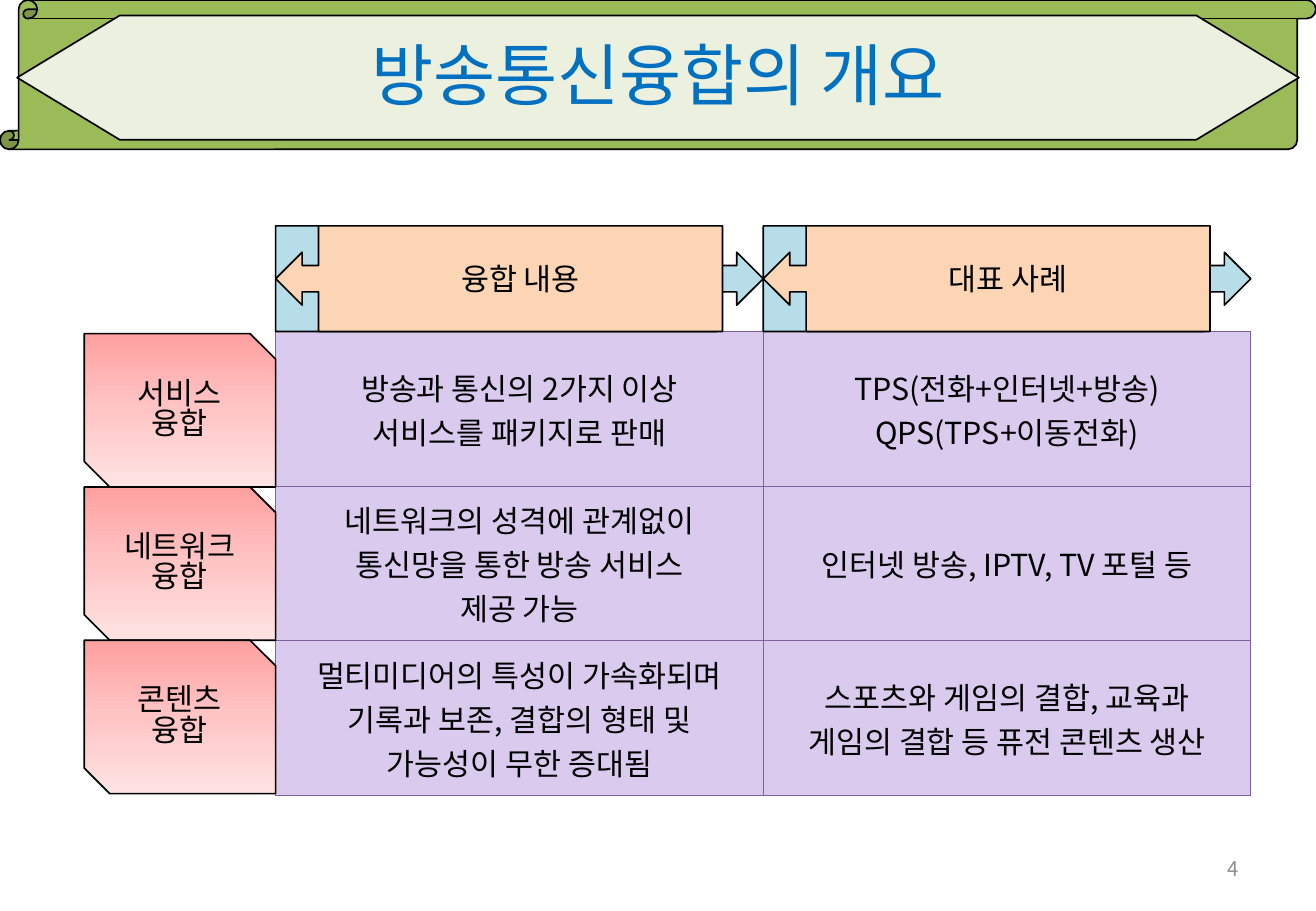
from copy import deepcopy
from dataclasses import dataclass

from lxml.etree import SubElement
from pptx import Presentation
from pptx.dml.color import RGBColor
from pptx.enum.shapes import MSO_SHAPE as Preset
from pptx.enum.text import MSO_ANCHOR as Anchor, PP_ALIGN as Align
from pptx.oxml.ns import qn
from pptx.shapes.autoshape import Shape
from pptx.slide import Slide
from pptx.table import _Cell as Cell
from pptx.text.text import TextFrame
from pptx.util import Inches, Pt

FONT = "Noto Sans CJK KR"
BLACK = RGBColor(0x00, 0x00, 0x00)
GREY = RGBColor(0x8C, 0x8C, 0x8C)
BLUE = RGBColor(0x00, 0x70, 0xC0)
GREEN = RGBColor(0x9B, 0xBB, 0x59)
PALE_GREEN = RGBColor(0xEB, 0xF1, 0xDE)
PALE_BLUE = RGBColor(0xB7, 0xDE, 0xE8)
PEACH = RGBColor(0xFC, 0xD5, 0xB5)
LILAC = RGBColor(0xD9, 0xCA, 0xEE)
PURPLE = RGBColor(0x7D, 0x60, 0xA0)
PINKS = [RGBColor(0xFF, 0xA0, 0xA0), RGBColor(0xFF, 0xC5, 0xC5), RGBColor(0xFF, 0xE3, 0xE3)]

SLIDE_WIDTH, SLIDE_HEIGHT = Inches(10.83), Inches(7.5)
TABLE_LEFT, TABLE_TOP = 20.95, 36.4
COLUMN_WIDTH, ROW_HEIGHT = 37.05, 16.97
HEADER_TOP, HEADER_HEIGHT, HEADER_FRONT = 24.8, 11.6, 33.95
LABEL_LEFT, LABEL_TOP, LABEL_WIDTH, LABEL_HEIGHT = 6.4, 36.63, 14.55, 16.83


@dataclass(frozen=True)
class Area:
    """Left, top, width and height in percent of the slide."""
    left: float
    top: float
    width: float
    height: float

    def lengths(self) -> tuple[int, int, int, int]:
        return (int(SLIDE_WIDTH * self.left / 100), int(SLIDE_HEIGHT * self.top / 100),
                int(SLIDE_WIDTH * self.width / 100), int(SLIDE_HEIGHT * self.height / 100))


@dataclass(frozen=True)
class Row:
    label: str
    content: str
    example: str


HEADERS = ["융합 내용", "대표 사례"]
ROWS = [
    Row("서비스\n융합", "방송과 통신의 2가지 이상\n서비스를 패키지로 판매",
        "TPS(전화+인터넷+방송)\nQPS(TPS+이동전화)"),
    Row("네트워크\n융합", "네트워크의 성격에 관계없이\n통신망을 통한 방송 서비스\n제공 가능",
        "인터넷 방송, IPTV, TV 포털 등"),
    Row("콘텐츠\n융합", "멀티미디어의 특성이 가속화되며 기록과 보존, 결합의 형태 및\n가능성이 무한 증대됨",
        "스포츠와 게임의 결합, 교육과\n게임의 결합 등 퓨전 콘텐츠 생산"),
]


def write(frame: TextFrame, text: str, size: float = 18, color: RGBColor = BLACK,
          align: Align = Align.CENTER, spacing: float = 1.0) -> None:
    frame.text = text
    frame.word_wrap = True
    for para in frame.paragraphs:
        para.alignment = align
        para.line_spacing = spacing
        for span in para.runs:
            span.font.size = Pt(size)
            span.font.color.rgb = color
            span.font.name = FONT
            SubElement(span.font._element, qn("a:ea")).set("typeface", FONT)


def add_box(page: Slide, preset: Preset, area: Area, fill: RGBColor,
            adjustments: tuple[float, ...] = ()) -> Shape:
    box = page.shapes.add_shape(preset, *area.lengths())
    box.shadow.inherit = False
    box.fill.solid()
    box.fill.fore_color.rgb = fill
    box.line.color.rgb = BLACK
    box.line.width = Pt(1)
    for index, value in enumerate(adjustments):
        box.adjustments[index] = value
    box.text_frame.vertical_anchor = Anchor.MIDDLE
    return box


def add_banner(page: Slide) -> None:
    add_box(page, Preset.VERTICAL_SCROLL, Area(0, 0, 100, 16.4), GREEN)
    panel = add_box(page, Preset.HEXAGON, Area(1.3, 1.7, 97.4, 13.65), PALE_GREEN, (0.825,))
    title = page.shapes.title
    title.left, title.top, title.width, title.height = Area(5, -0.27, 90, 16.67).lengths()
    title.text_frame.vertical_anchor = Anchor.MIDDLE
    write(title.text_frame, "방송통신융합의 개요", 40, BLUE)
    panel.element.addnext(title.element)


def add_header(page: Slide, column: int, text: str) -> None:
    left = TABLE_LEFT + column * COLUMN_WIDTH
    callout = (0.25, 0.25, 0.25, 0.904)
    add_box(page, Preset.RIGHT_ARROW_CALLOUT,
            Area(left, HEADER_TOP, COLUMN_WIDTH, HEADER_HEIGHT), PALE_BLUE, callout)
    front = add_box(page, Preset.RIGHT_ARROW_CALLOUT,
                    Area(left, HEADER_TOP, HEADER_FRONT, HEADER_HEIGHT), PEACH, callout)
    front.element.spPr.find(qn("a:xfrm")).set("flipH", "1")
    write(front.text_frame, text)


def add_label(page: Slide, row: int, text: str) -> None:
    area = Area(LABEL_LEFT, LABEL_TOP + row * LABEL_HEIGHT, LABEL_WIDTH, LABEL_HEIGHT)
    box = add_box(page, Preset.SNIP_2_DIAG_RECTANGLE, area, PINKS[0])
    box.fill.gradient()
    box.fill.gradient_angle = 270
    stops = box.element.spPr.find(f".//{qn('a:gsLst')}")
    stops.insert(1, deepcopy(stops[0]))
    for index, stop in enumerate(box.fill.gradient_stops):
        stop.color.rgb = PINKS[index]
        stop.position = index / 2
    write(box.text_frame, text, spacing=0.83)


def style_cell(cell: Cell, text: str) -> None:
    properties = cell._tc.get_or_add_tcPr()
    for side in ("a:lnL", "a:lnR", "a:lnT", "a:lnB"):
        border = SubElement(properties, qn(side), w=str(Pt(0.75)))
        SubElement(SubElement(border, qn("a:solidFill")), qn("a:srgbClr"), val=str(PURPLE))
    cell.fill.solid()
    cell.fill.fore_color.rgb = LILAC
    cell.vertical_anchor = Anchor.MIDDLE
    write(cell.text_frame, text)


def add_comparison(page: Slide) -> None:
    area = Area(TABLE_LEFT, TABLE_TOP, COLUMN_WIDTH * len(HEADERS), ROW_HEIGHT * len(ROWS))
    table = page.shapes.add_table(len(ROWS), len(HEADERS), *area.lengths()).table
    table.first_row = False
    table.horz_banding = False
    for index, row in enumerate(ROWS):
        style_cell(table.cell(index, 0), row.content)
        style_cell(table.cell(index, 1), row.example)


def add_page_number(page: Slide) -> None:
    box = page.shapes.add_textbox(*Area(71.67, 92.67, 23.33, 5.33).lengths())
    box.text_frame.vertical_anchor = Anchor.MIDDLE
    write(box.text_frame, "4", 12, GREY, Align.RIGHT)


def main() -> None:
    deck = Presentation()
    deck.slide_width, deck.slide_height = SLIDE_WIDTH, SLIDE_HEIGHT
    page = deck.slides.add_slide(deck.slide_layouts[5])
    add_banner(page)
    add_comparison(page)
    add_page_number(page)
    for column, text in enumerate(HEADERS):
        add_header(page, column, text)
    for index, row in enumerate(ROWS):
        add_label(page, index, row.label)
    deck.save("out.pptx")


if __name__ == "__main__":
    main()
